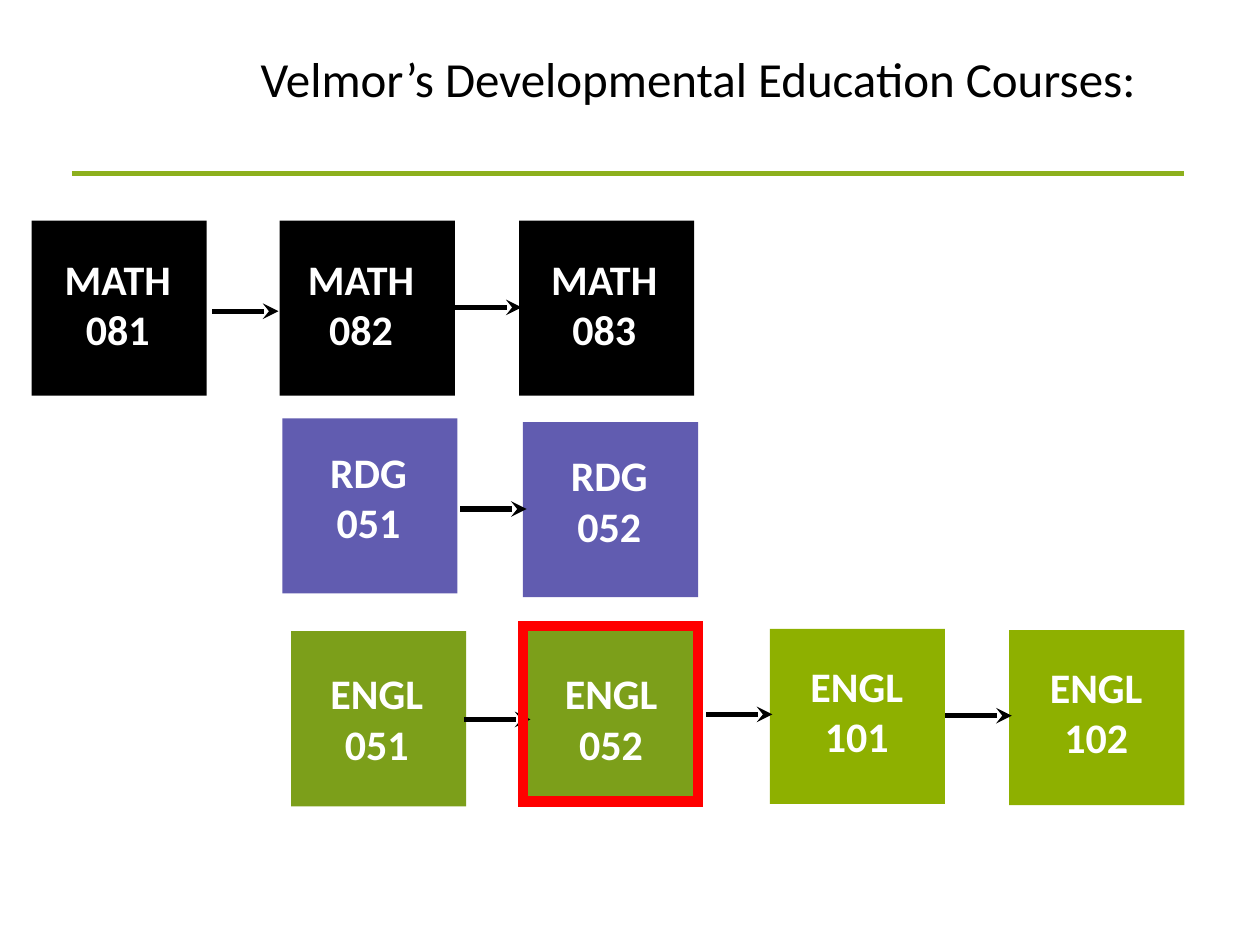
import dataclasses
import pptx
import pptx.dml.color
import pptx.enum.shapes
import pptx.enum.text
import pptx.oxml.ns
import pptx.util
from lxml import etree

Inches = pptx.util.Inches
Pt = pptx.util.Pt
qn = pptx.oxml.ns.qn


@dataclasses.dataclass
class Theme:
    font: str = "Calibri"
    black: str = "000000"
    white: str = "FFFFFF"
    rule: str = "8DB01D"
    purple: str = "615CB0"
    green: str = "7C9F1A"
    lime: str = "8EB000"
    red: str = "FF0000"
    title: int = 28
    label: int = 24
    line: int = 3
    frame: int = 6
    side: float = 1.39


def color(code):
    return pptx.dml.color.RGBColor.from_string(code)


def write(frame, text, *, font, size, ink, bold=False, inset=None, wrap=False):
    """Fill a text frame with centred lines in one format."""
    frame.word_wrap = wrap
    frame.auto_size = pptx.enum.text.MSO_AUTO_SIZE.SHAPE_TO_FIT_TEXT
    if inset is not None:
        frame.margin_left = frame.margin_right = Inches(inset)
        frame.margin_top = frame.margin_bottom = Inches(inset)
    for i, line in enumerate(text.split("\n")):
        para = frame.paragraphs[0] if i == 0 else frame.add_paragraph()
        para.alignment = pptx.enum.text.PP_ALIGN.CENTER
        run = para.add_run()
        run.text = line
        run.font.name = font
        run.font.size = Pt(size)
        run.font.bold = bold
        run.font.color.rgb = color(ink)


class Board:
    def __init__(self, slide, theme):
        self.slide, self.theme = slide, theme

    def title(self, text, left, top, width, height):
        shape = self.slide.shapes.title
        shape.left, shape.top = Inches(left), Inches(top)
        shape.width, shape.height = Inches(width), Inches(height)
        write(shape.text_frame, text, font=self.theme.font,
              size=self.theme.title, ink=self.theme.black, wrap=True)

    def square(self, left, top, fill=None, edge=None):
        side = Inches(self.theme.side)
        shape = self.slide.shapes.add_shape(
            pptx.enum.shapes.MSO_SHAPE.RECTANGLE,
            Inches(left), Inches(top), side, side)
        shape.shadow.inherit = False
        if fill:
            shape.fill.solid()
            shape.fill.fore_color.rgb = color(fill)
        else:
            shape.fill.background()
        if edge:
            shape.line.color.rgb = color(edge)
            shape.line.width = Pt(self.theme.frame)
            # Sharp corners
            etree.SubElement(shape.line._get_or_add_ln(), qn("a:miter"),
                             lim="800000")
        else:
            shape.line.fill.background()

    def label(self, text, left, top, width, height, inset):
        box = self.slide.shapes.add_textbox(
            Inches(left), Inches(top), Inches(width), Inches(height))
        write(box.text_frame, text, font=self.theme.font, bold=True,
              size=self.theme.label, ink=self.theme.white, inset=inset)

    def line(self, start, end, ink, head=False):
        link = self.slide.shapes.add_connector(
            pptx.enum.shapes.MSO_CONNECTOR.STRAIGHT,
            *(Inches(n) for n in (*start, *end)))
        link.line.color.rgb = color(ink)
        link.line.width = Pt(self.theme.line)
        if head:
            etree.SubElement(link.line._get_or_add_ln(), qn("a:headEnd"),
                             type="stealth")
        etree.SubElement(link._element.spPr, qn("a:effectLst"))

    def arrow(self, tip, level, span=0.53):
        """Point right, with the head at the tip."""
        self.line((tip, level), (tip - span, level), self.theme.black, True)


def main():
    deck = pptx.Presentation()
    deck.slide_width, deck.slide_height = Inches(10), Inches(7.5)
    theme = Theme()
    board = Board(deck.slides.add_slide(deck.slide_layouts[5]), theme)

    # Heading and rule
    board.title("Velmor’s Developmental Education Courses:",
                1.5, 0.33, 8.08, 0.57)
    board.line((0.57, 1.38), (9.4, 1.38), theme.rule)

    # Each track: course, fill, label drop, width, height and inset,
    # then its squares (number, left, top, label shift), then arrow tips
    tracks = [
        ("RDG", theme.purple, 0.22, 0.75, 0.76, 0,
         [("051", 2.24, 3.32, 0.31), ("052", 4.15, 3.35, 0.31)],
         [(4.18, 4.04)]),
        ("MATH", theme.black, 0.26, 0.95, 0.76, 0,
         [("081", 0.25, 1.75, 0.21), ("082", 2.22, 1.75, 0.17),
          ("083", 4.12, 1.75, 0.2)],
         [(4.14, 2.44), (2.21, 2.47)]),
        ("ENGL", theme.green, 0.25, 1.02, 0.85, 0.04,
         [("051", 2.31, 5.01, 0.17), ("052", 4.17, 5.01, 0.17)],
         [(4.21, 5.71)]),
        ("ENGL", theme.lime, 0.25, 1, 0.81, 0,
         [("101", 6.11, 4.99, 0.19), ("102", 8.01, 5, 0.19)],
         [(6.13, 5.67), (8.03, 5.68)]),
    ]
    for course, fill, drop, width, height, inset, squares, tips in tracks:
        for number, left, top, shift in squares:
            board.square(left, top, fill=fill)
            board.label(f"{course}\n{number}", left + shift, top + drop,
                        width, height, inset)
        for tip, level in tips:
            board.arrow(tip, level)

    # Red frame around ENGL 052
    board.square(4.15, 4.97, edge=theme.red)

    deck.save("out.pptx")


if __name__ == "__main__":
    main()
